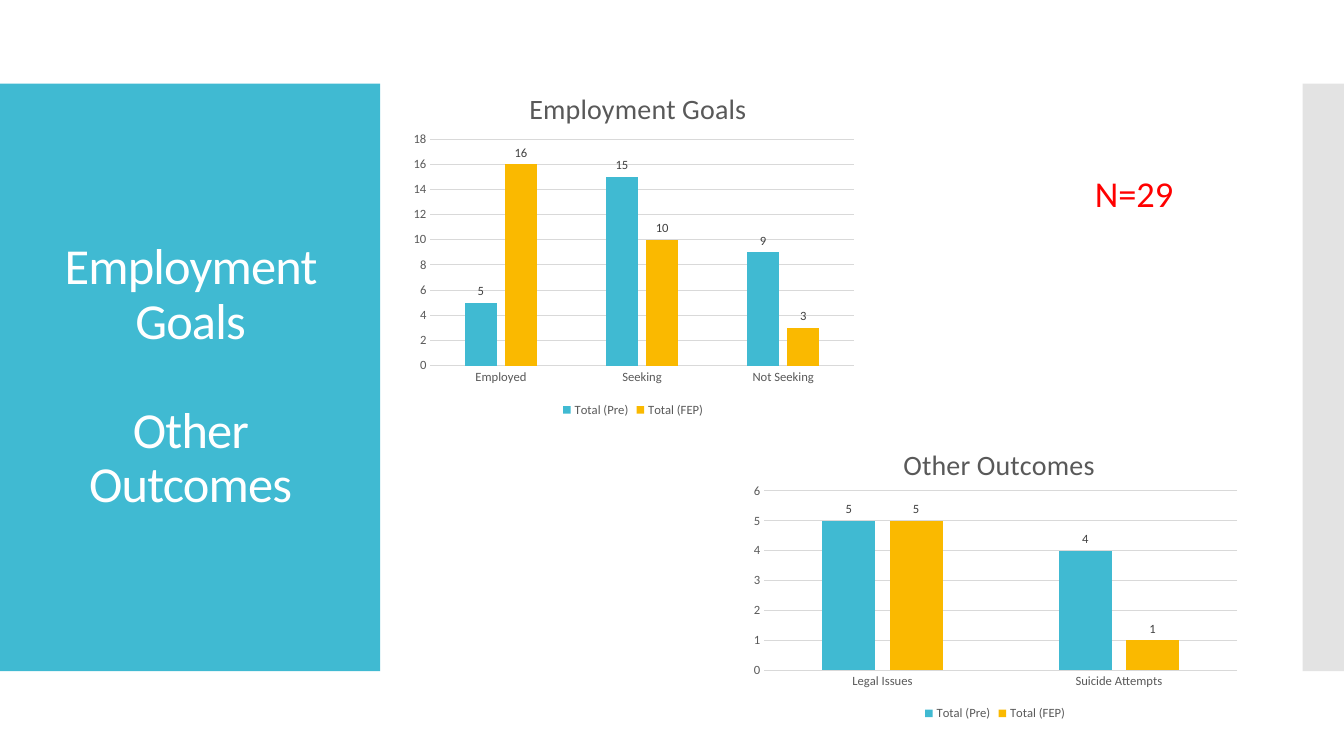
from lxml import etree
from pptx import Presentation
from pptx.chart.data import CategoryChartData as ChartData
from pptx.dml.color import RGBColor
from pptx.enum.chart import XL_CHART_TYPE as ChartType
from pptx.enum.chart import XL_LABEL_POSITION as LabelPos
from pptx.enum.chart import XL_LEGEND_POSITION as LegendPos
from pptx.enum.chart import XL_TICK_MARK as Tick
from pptx.enum.shapes import MSO_SHAPE as Shape
from pptx.enum.text import MSO_ANCHOR as Anchor, PP_ALIGN as Align
from pptx.oxml import parse_xml
from pptx.oxml.ns import nsdecls, qn
from pptx.util import Inches, Pt

FONT = "Calibri"
TEAL, GOLD, GREY, LINE = "40BAD2", "FAB900", "595959", "D9D9D9"
HEADS = ["Employment Goals", "Other Outcomes"]
SERIES = [("Total (Pre)", TEAL), ("Total (FEP)", GOLD)]
# Boxes are left, top, width, height in inches; "head" is left, top.
CHARTS = [
    dict(title=HEADS[0], box=(4.01, 0.6, 4.54, 3.58),
         plot=(4.27, 1.38, 4.2, 2.25), head=(5.2, 0.83), top=18, step=2,
         cats=["Employed", "Seeking", "Not Seeking"],
         vals=[(5, 15, 9), (16, 10, 3)]),
    dict(title=HEADS[1], box=(7.37, 4.19, 5, 3),
         plot=(7.58, 4.87, 4.69, 1.78), head=(8.91, 4.36), top=6, step=1,
         cats=["Legal Issues", "Suicide Attempts"],
         vals=[(5, 4), (5, 1)]),
]


def rgb(code):
    return RGBColor.from_string(code)


def style(font, size, color):
    font.name, font.size, font.bold = FONT, Pt(size), False
    font.color.rgb = rgb(color)


def paint(form, color):
    form.fill.solid()
    form.fill.fore_color.rgb = rgb(color)


def add_panel(slide, box, color, alpha=None):
    panel = slide.shapes.add_shape(Shape.RECTANGLE, *map(Inches, box))
    panel.shadow.inherit = False
    paint(panel, color)
    panel.line.fill.background()
    if alpha:
        tint = panel.fill._xPr.find(".//" + qn("a:srgbClr"))
        etree.SubElement(tint, qn("a:alpha"), val=str(alpha * 1000))


def add_text(slide, box, lines, size, color, align=Align.LEFT,
             anchor=Anchor.TOP, wrap=True, pitch=None, gap=0, track=0):
    frame = slide.shapes.add_textbox(*map(Inches, box)).text_frame
    frame.word_wrap, frame.vertical_anchor = wrap, anchor
    for i, line in enumerate(lines):
        para = frame.add_paragraph() if i else frame.paragraphs[0]
        para.alignment, para.line_spacing = align, pitch
        para.space_before = Pt(gap if i else 0)
        run = para.add_run()
        run.text = line
        style(run.font, size, color)
        if track:
            run.font._element.set("spc", str(track))


def place(node, chart_box, spot, inner=False):
    """Give a chart part a fixed layout, from slide inches to fractions."""
    left, top, wide, high = chart_box
    parts = {"x": (spot[0] - left) / wide, "y": (spot[1] - top) / high}
    if inner:
        parts.update(w=spot[2] / wide, h=spot[3] / high)
    target = '<c:layoutTarget val="inner"/>' if inner else ""
    modes = "".join(f'<c:{k}Mode val="edge"/>' for k in "xy")
    sizes = "".join(f'<c:{k} val="{v:.3f}"/>' for k, v in parts.items())
    layout = parse_xml(f'<c:layout {nsdecls("c")}><c:manualLayout>{target}'
                       f'{modes}{sizes}</c:manualLayout></c:layout>')
    for old in node.findall(qn("c:layout")):
        node.remove(old)
    text = node.find(qn("c:tx"))
    node.insert(0 if text is None else 1, layout)


def add_bars(slide, item):
    data = ChartData()
    data.categories = item["cats"]
    for (name, _), vals in zip(SERIES, item["vals"]):
        data.add_series(name, vals)
    box = item["box"]
    chart = slide.shapes.add_chart(
        ChartType.COLUMN_CLUSTERED, *map(Inches, box), data).chart
    style(chart.font, 10, "000000")

    run = chart.chart_title.text_frame.paragraphs[0].add_run()
    run.text = item["title"]
    style(run.font, 20, GREY)
    chart.chart_title.include_in_layout = False
    place(chart.chart_title._element, box, item["head"])
    place(chart._chartSpace.chart.plotArea, box, item["plot"], inner=True)

    chart.has_legend = True
    chart.legend.position = LegendPos.BOTTOM
    chart.legend.include_in_layout = False
    style(chart.legend.font, 9, GREY)

    cat, val = chart.category_axis, chart.value_axis
    for axis in (cat, val):
        axis.major_tick_mark = axis.minor_tick_mark = Tick.NONE
        style(axis.tick_labels.font, 9, GREY)
    val.minimum_scale, val.maximum_scale = 0, item["top"]
    val.major_unit = item["step"]
    val.format.line.fill.background()
    for form in (cat.format, val.major_gridlines.format):
        form.line.color.rgb = rgb(LINE)
        form.line.width = Pt(0.75)

    plot = chart.plots[0]
    plot.gap_width, plot.overlap = 219, -27
    plot.vary_by_categories = False
    for (_, color), bars in zip(SERIES, plot.series):
        paint(bars.format, color)
        labels = bars.data_labels
        labels.show_value, labels.position = True, LabelPos.OUTSIDE_END
        style(labels.font, 9, "404040")


def main():
    deck = Presentation()
    deck.slide_width, deck.slide_height = Inches(13.33), Inches(7.5)
    slide = deck.slides.add_slide(deck.slide_layouts[6])
    add_panel(slide, (0, 0.83, 3.77, 5.83), TEAL)
    add_panel(slide, (12.92, 0.83, 0.41, 5.83), "C8C8C8", alpha=50)
    add_text(slide, (0.28, 1.23, 3.22, 5.03), HEADS, 36, "FFFFFF",
             align=Align.CENTER, anchor=Anchor.MIDDLE, pitch=0.9,
             gap=39, track=-60)
    for item in CHARTS:
        add_bars(slide, item)
    add_text(slide, (10.76, 1.65, 1.02, 0.54), ["N=29"], 26, "FF0000",
             wrap=False)
    deck.save("out.pptx")


if __name__ == "__main__":
    main()
